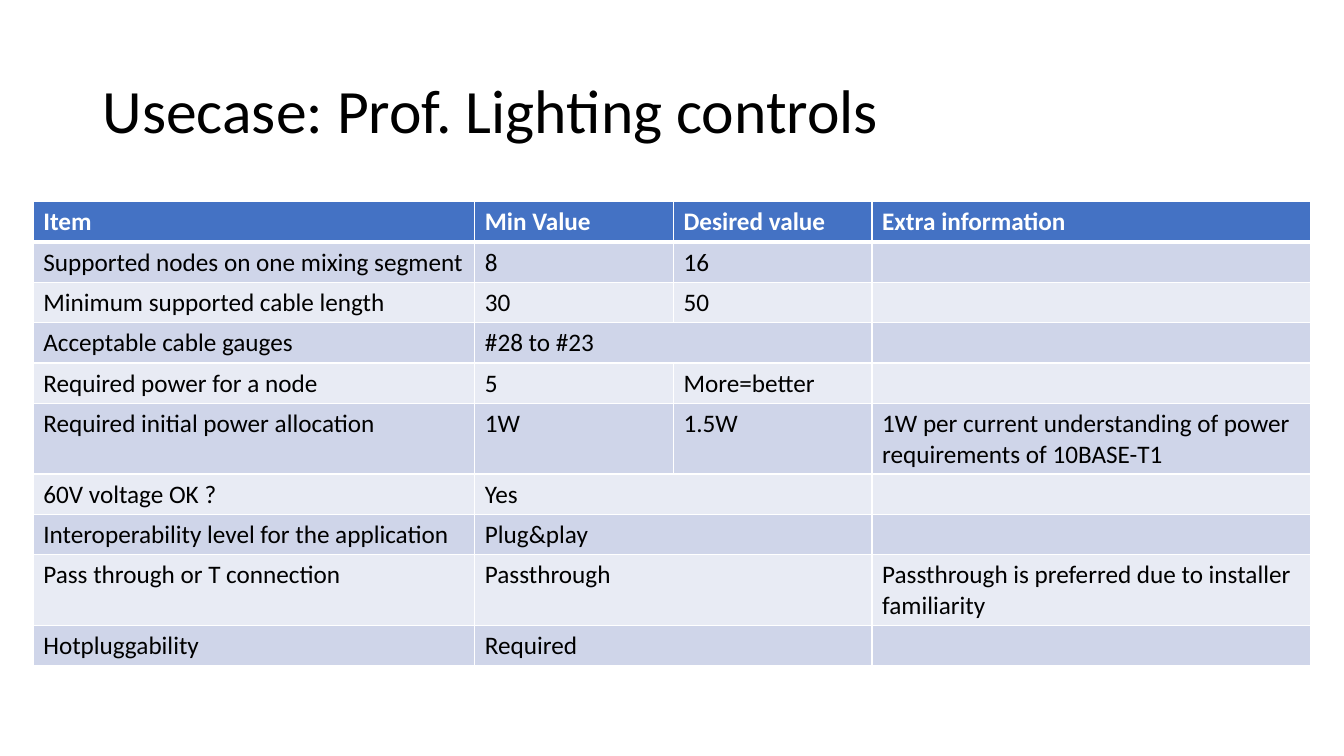
from lxml import etree
from pptx import Presentation
from pptx.dml.color import RGBColor
from pptx.enum.text import MSO_ANCHOR
from pptx.oxml.ns import qn
from pptx.util import Inches, Pt

MIDDLE = MSO_ANCHOR.MIDDLE
FONT = "Calibri"
BLACK, WHITE = "000000", "FFFFFF"
HEADER_FILL = "4472C4"
BAND_FILLS = ["E8EBF4", "CFD5E9"]
THIN, THICK = 0.96, 3

COLUMN_WIDTHS = [4.38, 1.97, 1.97, 4.35]
LINE_ROW, TWO_LINE_ROW = 0.4, 0.7

# None in the third column means the value spans both value columns.
ROWS = [
    ("Item", "Min Value", "Desired value", "Extra information"),
    ("Supported nodes on one mixing segment", "8", "16", ""),
    ("Minimum supported cable length", "30", "50", ""),
    ("Acceptable cable gauges", "#28 to #23", None, ""),
    ("Required power for a node", "5", "More=better", ""),
    ("Required initial power allocation", "1W", "1.5W",
     "1W per current understanding of power requirements of 10BASE-T1"),
    ("60V voltage OK ?", "Yes", None, ""),
    ("Interoperability level for the application", "Plug&play", None, ""),
    ("Pass through or T connection", "Passthrough", None,
     "Passthrough is preferred due to installer familiarity"),
    ("Hotpluggability", "Required", None, ""),
]


def add_span(para, text, size, color, bold=False):
    span = para.add_run()
    span.text = text
    span.font.name = FONT
    span.font.size = Pt(size)
    span.font.bold = bold
    span.font.color.rgb = RGBColor.from_string(color)


def add_border(cell, side, width):
    """Draw a white line on one side (L, R, T or B) of the cell."""
    properties = cell._tc.get_or_add_tcPr()
    line = etree.SubElement(properties, qn("a:ln" + side), w=str(Pt(width)))
    fill = etree.SubElement(line, qn("a:solidFill"))
    etree.SubElement(fill, qn("a:srgbClr"), val=WHITE)


deck = Presentation()
deck.slide_width = Inches(13.33)
deck.slide_height = Inches(7.5)
page = deck.slides.add_slide(deck.slide_layouts[6])

title_box = page.shapes.add_textbox(Inches(0.92), Inches(0.4), Inches(11.5), Inches(1.45))
title_frame = title_box.text_frame
title_frame.word_wrap = True
title_frame.vertical_anchor = MIDDLE
title_para = title_frame.paragraphs[0]
title_para.line_spacing = 0.9
add_span(title_para, "Usecase: Prof. Lighting controls", 44, BLACK)

table = page.shapes.add_table(
    len(ROWS), len(COLUMN_WIDTHS), Inches(0.33), Inches(2), Inches(12.67), Inches(4.6)
).table
for column, width in zip(table.columns, COLUMN_WIDTHS):
    column.width = Inches(width)

for row_index, texts in enumerate(ROWS):
    is_header = row_index == 0
    has_long_note = not is_header and texts[3]
    table.rows[row_index].height = Inches(TWO_LINE_ROW if has_long_note else LINE_ROW)
    if texts[2] is None:
        table.cell(row_index, 1).merge(table.cell(row_index, 2))

    for column_index, text in enumerate(texts):
        cell = table.cell(row_index, column_index)
        add_border(cell, "L", THIN)
        add_border(cell, "R", THIN)
        add_border(cell, "T", THICK if row_index == 1 else THIN)
        add_border(cell, "B", THICK if is_header else THIN)
        cell.fill.solid()
        fill_color = HEADER_FILL if is_header else BAND_FILLS[row_index % 2]
        cell.fill.fore_color.rgb = RGBColor.from_string(fill_color)
        if text:
            color = WHITE if is_header else BLACK
            add_span(cell.text_frame.paragraphs[0], text, 18, color, is_header)

deck.save("out.pptx")
